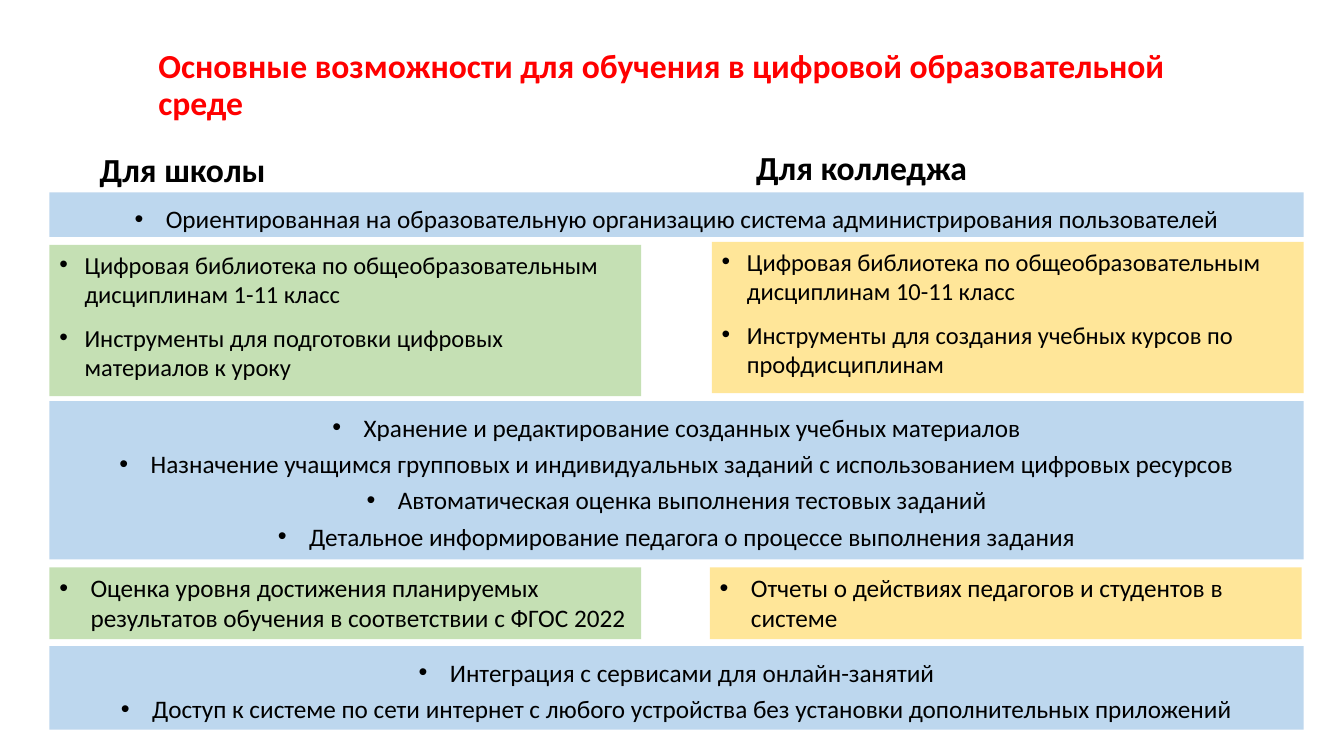
from lxml.etree import SubElement
from pptx import Presentation
from pptx.dml.color import RGBColor
from pptx.enum.text import MSO_ANCHOR, MSO_AUTO_SIZE, PP_ALIGN
from pptx.oxml.ns import qn
from pptx.util import Inches, Pt

COLORS = {"title": "FF0000", "text": "000000", "common": "BDD7EE",
          "school": "C5E0B4", "college": "FFE699"}
LEFT, COLUMN_WIDTH, FULL_WIDTH = 0.49, 5.87, 12.44

COMMON_BANDS = [
    (1.91, 0.44, ["Ориентированная на образовательную организацию система администрирования пользователей"]),
    (3.98, 1.57, ["Хранение и редактирование созданных учебных материалов",
                  "Назначение учащимся групповых и индивидуальных заданий с использованием цифровых ресурсов",
                  "Автоматическая оценка выполнения тестовых заданий",
                  "Детальное информирование педагога о процессе выполнения задания"]),
    (6.41, 0.83, ["Интеграция с сервисами для онлайн-занятий",
                  "Доступ к системе по сети интернет с любого устройства без установки дополнительных приложений"]),
]
LIBRARY_PANELS = [
    ("school", LEFT, 2.43, ["Цифровая библиотека по общеобразовательным дисциплинам 1-11 класс",
                            "Инструменты для подготовки цифровых материалов к уроку"]),
    ("college", 7.06, 2.4, ["Цифровая библиотека по общеобразовательным дисциплинам 10-11 класс",
                            "Инструменты для создания учебных курсов по профдисциплинам"]),
]
REPORT_PANELS = [
    ("school", LEFT, "Оценка уровня достижения планируемых результатов обучения в соответствии с ФГОС 2022"),
    ("college", 7.04, "Отчеты о действиях педагогов и студентов в системе"),
]


def style_text(para, size, color="text", bold=False):
    """Set the font of a whole paragraph."""
    para.font.name = "Calibri"
    para.font.size = Pt(size)
    para.font.bold = bold
    para.font.color.rgb = RGBColor.from_string(COLORS[color])


def add_bullet(para, indent):
    """Give a paragraph a round bullet with a hanging indent."""
    properties = para._p.get_or_add_pPr()
    properties.set("marL", str(Inches(indent)))
    properties.set("indent", str(-Inches(indent)))
    SubElement(properties, qn("a:buFont")).set("typeface", "Arial")
    SubElement(properties, qn("a:buChar")).set("char", "•")


def write_heading(box, text, anchor, color="text"):
    """Write one bold line of heading text into a box."""
    frame = box.text_frame
    frame.text = text
    frame.word_wrap = True
    frame.auto_size = MSO_AUTO_SIZE.NONE
    frame.vertical_anchor = anchor
    para = frame.paragraphs[0]
    para.alignment = PP_ALIGN.LEFT
    para.line_spacing = 0.9
    style_text(para, 24, color, bold=True)


def set_title(page, text):
    """Place and format the slide title."""
    title = page.shapes.title
    title.left, title.top = Inches(1.47), Inches(0.13)
    title.width, title.height = Inches(10.95), Inches(1.45)
    write_heading(title, text, MSO_ANCHOR.MIDDLE, "title")


def add_column_heading(page, left, top, text):
    """Add the heading of one column."""
    box = page.shapes.add_textbox(Inches(left), Inches(top), Inches(5.65), Inches(0.9))
    write_heading(box, text, MSO_ANCHOR.BOTTOM)


def add_panel(page, color, left, top, width, height, items, size=18, indent=0.31,
              align=PP_ALIGN.LEFT, spacing=1.0, gap=0):
    """Add a filled box with a bulleted list."""
    box = page.shapes.add_textbox(Inches(left), Inches(top), Inches(width), Inches(height))
    box.fill.solid()
    box.fill.fore_color.rgb = RGBColor.from_string(COLORS[color])
    frame = box.text_frame
    frame.word_wrap = True
    frame.text = "\n".join(items)
    for index, para in enumerate(frame.paragraphs):
        add_bullet(para, indent)
        para.alignment = align
        para.line_spacing = spacing
        para.space_before = Pt(gap if index else 0)
        style_text(para, size)


def main():
    """Build the slide and save the deck."""
    deck = Presentation()
    deck.slide_width, deck.slide_height = Inches(13.33), Inches(7.5)
    page = deck.slides.add_slide(deck.slide_layouts[5])
    set_title(page, "Основные возможности для обучения в цифровой образовательной среде")
    add_column_heading(page, 0.89, 1.03, "Для школы")
    add_column_heading(page, 7.4, 1.01, "Для колледжа")
    for color, left, top, items in LIBRARY_PANELS:
        add_panel(page, color, left, top, COLUMN_WIDTH, 1.5, items,
                  size=17.5, indent=0.25, gap=10)
    for top, height, items in COMMON_BANDS:
        add_panel(page, "common", LEFT, top, FULL_WIDTH, height, items,
                  align=PP_ALIGN.CENTER, spacing=1.2)
    for color, left, item in REPORT_PANELS:
        add_panel(page, color, left, 5.63, COLUMN_WIDTH, 0.71, [item])
    deck.save("out.pptx")


if __name__ == "__main__":
    main()
